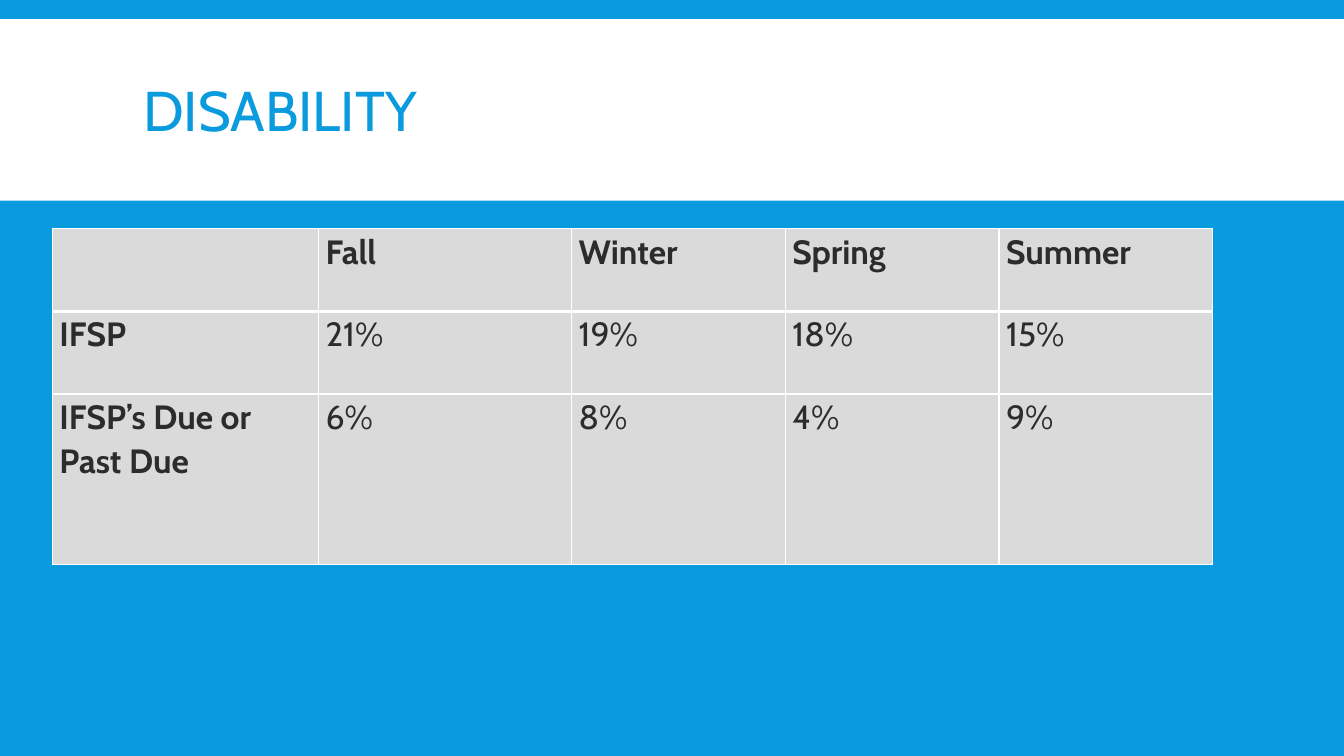
import pptx
import pptx.util
import pptx.dml.color
import pptx.enum.shapes
import pptx.enum.text
import pptx.oxml
import pptx.oxml.ns

Inches, Pt = pptx.util.Inches, pptx.util.Pt
RGB = pptx.dml.color.RGBColor

TITLE = "DISABILITY"
ROWS = [
    ["", "Fall", "Winter", "Spring", "Summer"],
    ["IFSP", "21%", "19%", "18%", "15%"],
    ["IFSP’s Due or Past Due", "6%", "8%", "4%", "9%"],
]
WIDTHS = [2.64, 2.51, 2.12, 2.12, 2.12]
HEIGHTS = [0.82, 0.82, 1.69]
FONT = "Cabin"
BLUE = RGB(0x09, 0x9B, 0xDD)
WHITE = RGB(0xFF, 0xFF, 0xFF)
GREY = RGB(0xDA, 0xDA, 0xDA)
DARK = RGB(0x2C, 0x2C, 0x2C)


def style(par, size, color, bold, spacing):
    par.font.name = FONT
    par.font.size = Pt(size)
    par.font.color.rgb = color
    par.font.bold = bold
    par.line_spacing = spacing


def border(cell, side, width):
    """Draw one side (L, R, T or B) of a cell in white; call before filling."""
    cell._tc.get_or_add_tcPr().append(pptx.oxml.parse_xml(
        f'<a:ln{side} {pptx.oxml.ns.nsdecls("a")} w="{Pt(width)}">'
        f'<a:solidFill><a:srgbClr val="{WHITE}"/></a:solidFill></a:ln{side}>'))


def add_title(slide):
    band = slide.shapes.add_shape(
        pptx.enum.shapes.MSO_SHAPE.RECTANGLE,
        0, Inches(0.19), Inches(13.33), Inches(1.8))
    band.shadow.inherit = False
    band.fill.solid()
    band.fill.fore_color.rgb = WHITE
    band.line.fill.background()
    slide.shapes._spTree.insert(2, band._element)  # behind the title

    title = slide.shapes.title
    title.left, title.top = Inches(1.32), Inches(0.31)
    title.width, title.height = Inches(10.7), Inches(1.65)
    frame = title.text_frame
    frame.text = TITLE
    frame.vertical_anchor = pptx.enum.text.MSO_ANCHOR.MIDDLE
    par = frame.paragraphs[0]
    par.alignment = pptx.enum.text.PP_ALIGN.LEFT
    style(par, 40, BLUE, False, 0.85)


def add_grid(slide):
    table = slide.shapes.add_table(
        len(ROWS), len(WIDTHS), Inches(0.52), Inches(2.27),
        Inches(sum(WIDTHS)), Inches(sum(HEIGHTS))).table
    for col, width in zip(table.columns, WIDTHS):
        col.width = Inches(width)
    for r, row in enumerate(ROWS):
        table.rows[r].height = Inches(HEIGHTS[r])
        for c, text in enumerate(row):
            cell = table.cell(r, c)
            cell.text = text
            cell.margin_left = cell.margin_right = Inches(0.07)
            cell.margin_top = cell.margin_bottom = 0
            style(cell.text_frame.paragraphs[0], 24, DARK,
                  r == 0 or c == 0, 1.07)
            for side in "LRTB":
                heavy = (r, side) in ((0, "B"), (1, "T"))
                border(cell, side, 3 if heavy else 1)
            cell.fill.solid()
            cell.fill.fore_color.rgb = GREY


def main():
    deck = pptx.Presentation()
    deck.slide_width, deck.slide_height = Inches(13.33), Inches(7.5)
    slide = deck.slides.add_slide(deck.slide_layouts[5])
    slide.background.fill.solid()
    slide.background.fill.fore_color.rgb = BLUE
    add_title(slide)
    add_grid(slide)
    deck.save("out.pptx")


if __name__ == "__main__":
    main()
